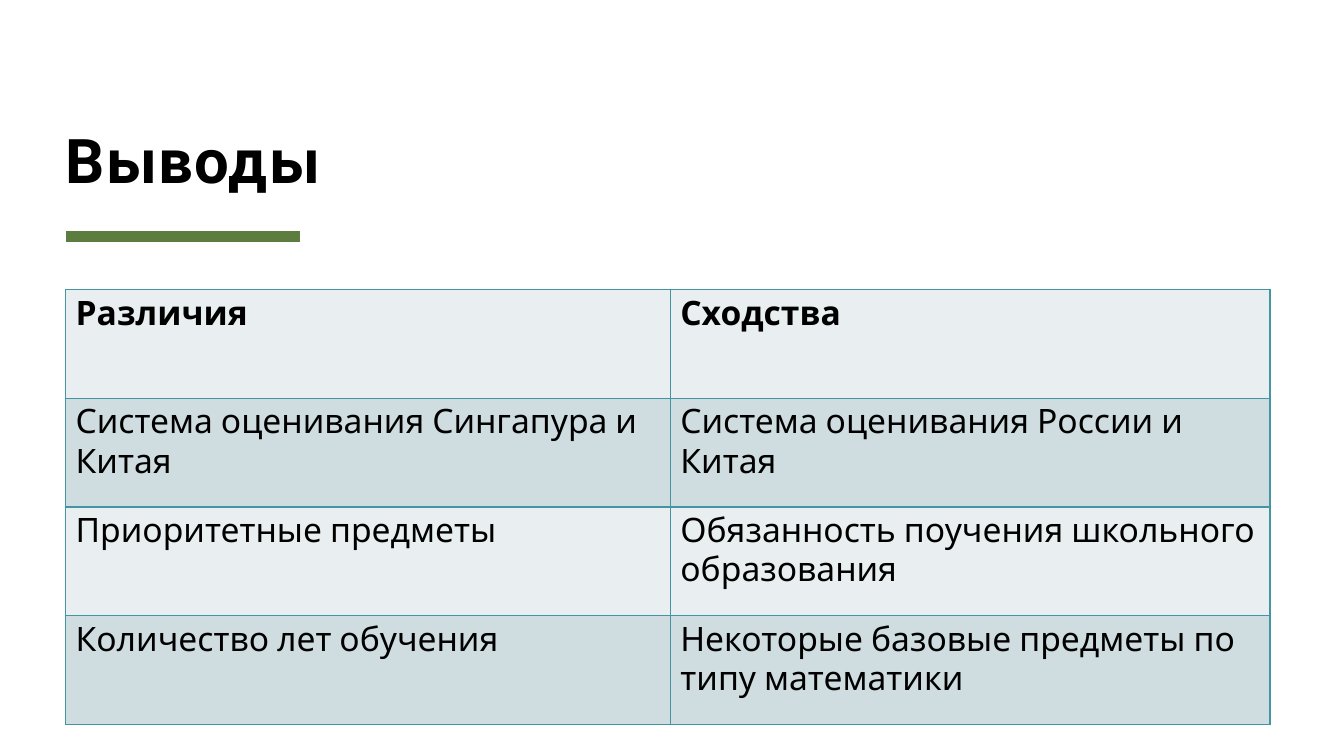
"""Build the conclusions slide: a title, an accent rule and a two-column table."""
from lxml import etree
from pptx import Presentation
from pptx.dml.color import RGBColor
from pptx.enum import shapes, text
from pptx.oxml.ns import qn
from pptx.util import Pt

TITLE = "Выводы"
ROWS = [
    ("Различия", "Сходства"),
    ("Система оценивания Сингапура и Китая", "Система оценивания России и Китая"),
    ("Приоритетные предметы", "Обязанность поучения школьного образования"),
    ("Количество лет обучения", "Некоторые базовые предметы по типу математики"),
]
COLORS = {"ink": "000000", "rule": "5D7D40", "edge": "4495A2",
          "light": "E9EFF0", "dark": "CFDDE0"}
LEFT = 46.8
WIDTHS = (432, 428.4)
HEIGHT = 77.76


def color(name):
    """Return the named colour."""
    return RGBColor.from_string(COLORS[name])


def style(para, face, size, bold):
    """Set the font of a paragraph."""
    font = para.font
    font.name, font.size, font.bold = face, Pt(size), bold
    font.color.rgb = color("ink")


def border(cell):
    """Draw thin lines on all four sides of a cell."""
    props = cell._tc.get_or_add_tcPr()
    for side in ("lnL", "lnR", "lnT", "lnB"):
        line = etree.SubElement(props, qn("a:" + side), w=str(Pt(1)))
        fill = etree.SubElement(line, qn("a:solidFill"))
        etree.SubElement(fill, qn("a:srgbClr"), val=COLORS["edge"])


def add_title(slide):
    """Add the title, resting on the bottom of its box."""
    frame = slide.shapes.add_textbox(Pt(LEFT), Pt(15.84), Pt(864), Pt(123.84)).text_frame
    frame.word_wrap = True
    frame.vertical_anchor = text.MSO_ANCHOR.BOTTOM
    frame.margin_left = frame.margin_right = frame.margin_top = frame.margin_bottom = 0
    para = frame.paragraphs[0]
    para.line_spacing = 0.8
    run = para.add_run()
    run.text = TITLE
    run._r.get_or_add_rPr().set("spc", "100")
    style(para, "Roboto", 44, True)


def add_rule(slide):
    """Add the accent line below the title."""
    rule = slide.shapes.add_connector(
        shapes.MSO_CONNECTOR.STRAIGHT, Pt(LEFT), Pt(169.2), Pt(214.56), Pt(169.2))
    rule.line.color.rgb = color("rule")
    rule.line.width = Pt(8)
    etree.SubElement(rule._element.spPr, qn("a:effectLst"))


def add_grid(slide):
    """Add the table with alternating row fills."""
    grid = slide.shapes.add_table(
        len(ROWS), len(WIDTHS), Pt(LEFT), Pt(206.64),
        Pt(sum(WIDTHS)), Pt(HEIGHT * len(ROWS))).table
    for col, width in zip(grid.columns, WIDTHS):
        col.width = Pt(width)
    for i, words in enumerate(ROWS):
        grid.rows[i].height = Pt(HEIGHT)
        for j, word in enumerate(words):
            cell = grid.cell(i, j)
            cell.text = word
            style(cell.text_frame.paragraphs[0], "Karla", 24, i == 0)
            border(cell)
            cell.fill.solid()
            cell.fill.fore_color.rgb = color("dark" if i % 2 else "light")


def main():
    """Build and save the deck."""
    deck = Presentation()
    deck.slide_width, deck.slide_height = Pt(960), Pt(540)
    slide = deck.slides.add_slide(deck.slide_layouts[6])
    add_rule(slide)
    add_title(slide)
    add_grid(slide)
    deck.save("out.pptx")


if __name__ == "__main__":
    main()
